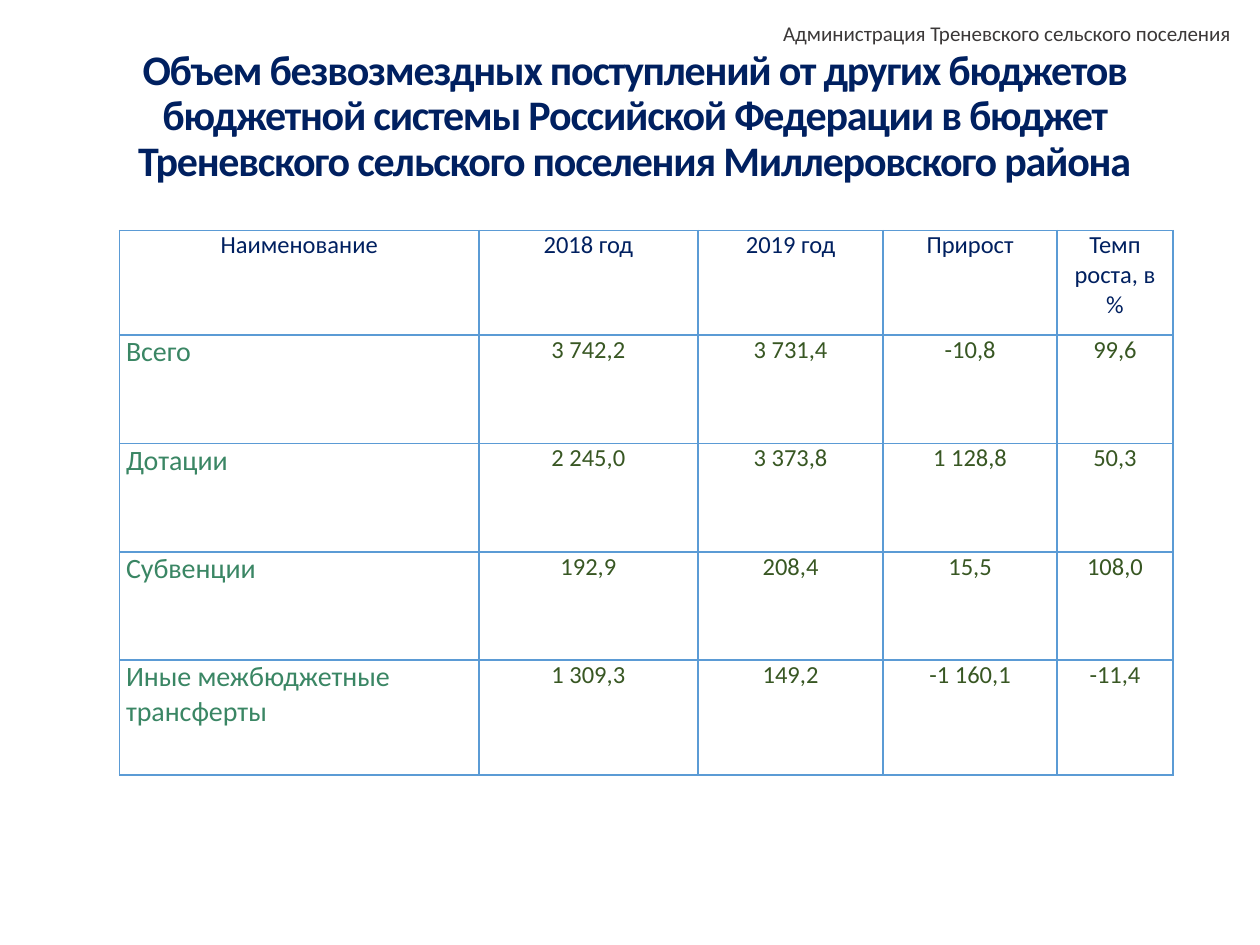
"""Build the slide on grants received by the settlement budget."""
import lxml.etree
import pptx
import pptx.dml.color
import pptx.enum.text
import pptx.oxml.ns
import pptx.util

RGB = pptx.dml.color.RGBColor
NAVY = RGB(0x00, 0x20, 0x60)
GREEN = RGB(0x3A, 0x86, 0x64)
OLIVE = RGB(0x38, 0x57, 0x23)
GREY = RGB(0x3B, 0x38, 0x38)
BLUE = RGB(0x5B, 0x9B, 0xD5)
ALIGN = pptx.enum.text.PP_ALIGN
ANCHOR = pptx.enum.text.MSO_ANCHOR
inch = pptx.util.Inches

COLS = [2.85, 1.74, 1.47, 1.38, 0.92]
ROWS = [0.83, 0.86, 0.86, 0.86, 0.91]
DATA = [
    ["Наименование", "2018 год", "2019 год", "Прирост", "Темп роста, в %"],
    ["Всего", "3 742,2", "3 731,4", "-10,8", "99,6"],
    ["Дотации", "2 245,0", "3 373,8", "1 128,8", "50,3"],
    ["Субвенции", "192,9", "208,4", "15,5", "108,0"],
    ["Иные межбюджетные трансферты", "1 309,3", "149,2", "-1 160,1", "-11,4"],
]


def write(frame, text, size, color, align, bold=False):
    frame.word_wrap = True
    par = frame.paragraphs[0]
    par.alignment = align
    par.font.name = "Calibri"
    par.font.size = pptx.util.Pt(size)
    par.font.bold = bold
    par.font.color.rgb = color
    run = par.add_run()
    run.text = text
    return par


def edge(cell):
    props = cell._tc.get_or_add_tcPr()
    for side in ("lnL", "lnR", "lnT", "lnB"):
        line = lxml.etree.SubElement(props, pptx.oxml.ns.qn("a:" + side), w=str(pptx.util.Pt(1)))
        fill = lxml.etree.SubElement(line, pptx.oxml.ns.qn("a:solidFill"))
        lxml.etree.SubElement(fill, pptx.oxml.ns.qn("a:srgbClr"), val=str(BLUE))


deck = pptx.Presentation()
deck.slide_width, deck.slide_height = inch(10), inch(7.5)
slide = deck.slides.add_slide(deck.slide_layouts[6])

title = slide.shapes.add_textbox(inch(0.75), inch(0.58), inch(8.57), inch(1.07)).text_frame
title.vertical_anchor = ANCHOR.MIDDLE
title.margin_top, title.margin_bottom = 0, inch(0.37)
par = write(
    title,
    "Объем безвозмездных поступлений от других бюджетов бюджетной системы "
    "Российской Федерации в бюджет Треневского сельского поселения Миллеровского района",
    24, NAVY, ALIGN.CENTER, True,
)
par.line_spacing = 0.9
par.runs[0]._r.get_or_add_rPr().set("spc", "-70")

grid = slide.shapes.add_table(
    len(ROWS), len(COLS), inch(0.95), inch(1.83), inch(sum(COLS)), inch(sum(ROWS))
).table
grid.first_row = grid.horz_banding = False
for col, width in zip(grid.columns, COLS):
    col.width = inch(width)
for row, height in zip(grid.rows, ROWS):
    row.height = inch(height)

for r, line in enumerate(DATA):
    for c, text in enumerate(line):
        cell = grid.cell(r, c)
        cell.margin_left = cell.margin_right = inch(0.05)
        cell.margin_top = cell.margin_bottom = 0
        edge(cell)
        cell.fill.background()
        if r == 0:
            look = 14, NAVY, ALIGN.CENTER
        elif c == 0:
            look = 16, GREEN, ALIGN.LEFT
        else:
            look = 14, OLIVE, ALIGN.CENTER
        write(cell.text_frame, text, *look)

owner = slide.shapes.add_textbox(inch(3.54), inch(0.14), inch(6.33), inch(0.24)).text_frame
owner.vertical_anchor = ANCHOR.MIDDLE
write(owner, "Администрация Треневского сельского поселения", 12, GREY, ALIGN.RIGHT)

deck.save("out.pptx")
